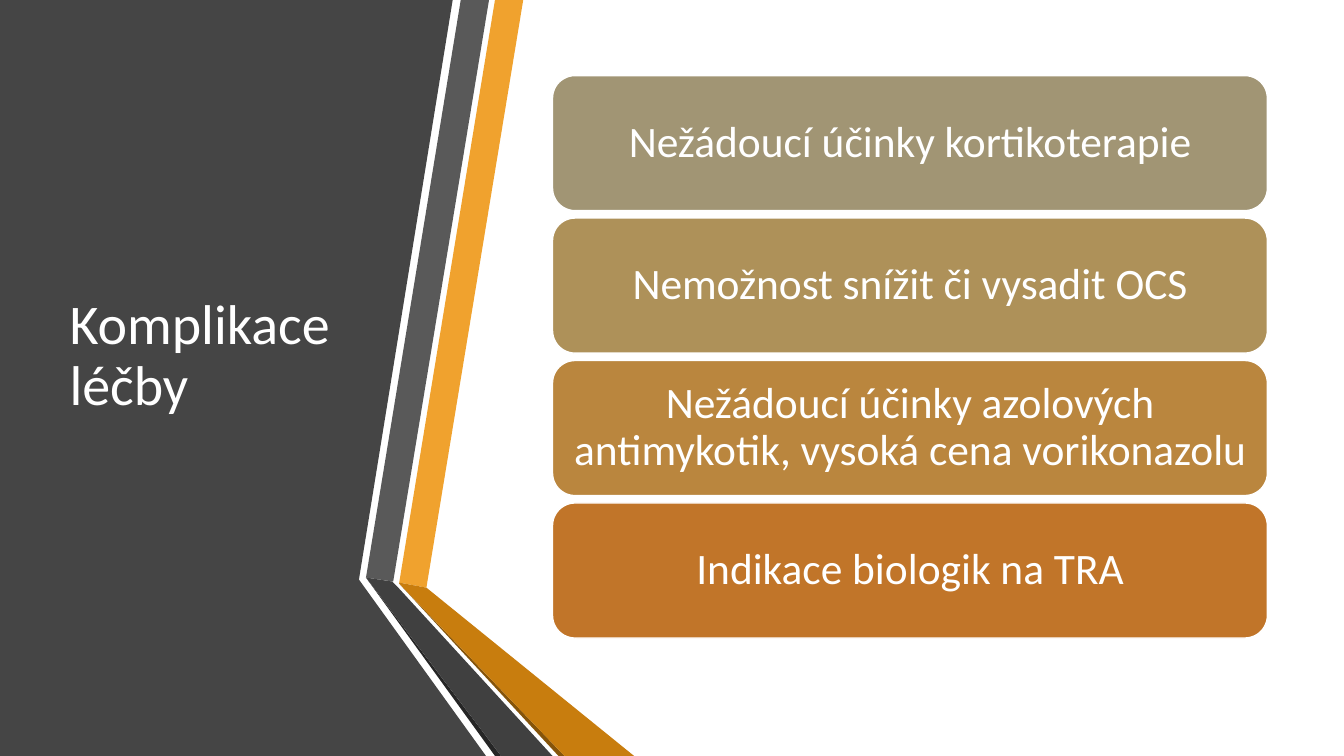
from pptx import Presentation
from pptx import util as u
from pptx.dml.color import RGBColor
from pptx.enum import shapes, text

W, H = 13.33, 7.5
TOP, BODY_H = H * 0.1, 5.58
FONT = "Calibri"
COLORS = {
    "panel": "454545", "orange": "F0A22E", "grey": "595959",
    "black": "262626", "brown": "85540A", "amber": "C87D0E",
    "charcoal": "404040", "white": "FFFFFF",
}
# Ribbon pieces from back to front: colour and corner points in inches
RIBBONS = [
    ("panel", [(0, 0), (4.49, 0), (3.56, 5.75), (4.82, H), (0, H)]),
    ("orange", [(3.96, 5.78), (4.23, 5.83), (5.19, 0), (4.91, 0)]),
    ("grey", [(4.85, 0), (4.57, 0), (3.63, 5.73), (3.9, 5.77)]),
    ("black", [(3.63, 5.73), (4.91, H), (4.97, H)]),
    ("brown", [(3.96, 5.79), (5.54, H), (5.6, H)]),
    ("amber", [(3.96, 5.79), (5.6, H), (6.29, H), (4.23, 5.83), (3.96, 5.78)]),
    ("charcoal", [(5.48, H), (3.95, 5.83), (3.89, 5.77), (3.63, 5.73), (4.97, H)]),
]
CARDS = [
    ("Nežádoucí účinky kortikoterapie", "A19574"),
    ("Nemožnost snížit či vysadit OCS", "AE9159"),
    ("Nežádoucí účinky azolových antimykotik, vysoká cena vorikonazolu", "BA863E"),
    ("Indikace biologik na TRA", "C17529"),
]
CARD_X, CARD_W, CARD_H = 5.48, 7.09, 1.34
CARD_STEP = (BODY_H - CARD_H) / (len(CARDS) - 1)


def rgb(value):
    return RGBColor.from_string(value)


def write(tf, words, size, align):
    tf.word_wrap = True
    tf.auto_size = text.MSO_AUTO_SIZE.NONE
    tf.vertical_anchor = text.MSO_ANCHOR.MIDDLE
    tf.text = words
    p = tf.paragraphs[0]
    p.alignment = align
    p.line_spacing = 0.9
    font = p.runs[0].font
    font.name, font.size = FONT, u.Pt(size)
    font.color.rgb = rgb(COLORS["white"])


def add_ribbon(s, color, points):
    corners = [(u.Inches(x), u.Inches(y)) for x, y in points]
    builder = s.shapes.build_freeform(*corners[0])
    builder.add_line_segments(corners[1:], close=True)
    sp = builder.convert_to_shape()
    sp.shadow.inherit = False
    sp.fill.solid()
    sp.fill.fore_color.rgb = rgb(COLORS[color])
    sp.line.fill.background()


def add_card(s, row, words, color):
    sp = s.shapes.add_shape(
        shapes.MSO_SHAPE.ROUNDED_RECTANGLE, u.Inches(CARD_X),
        u.Inches(TOP + row * CARD_STEP), u.Inches(CARD_W), u.Inches(CARD_H))
    sp.shadow.inherit = False
    sp.fill.solid()
    sp.fill.fore_color.rgb = rgb(color)
    sp.line.color.rgb = rgb(COLORS["white"])
    sp.line.width = u.Pt(1)
    tf = sp.text_frame
    tf.margin_left = tf.margin_right = u.Inches(0.13)
    tf.margin_top = tf.margin_bottom = u.Inches(0.06)
    write(tf, words, 31, text.PP_ALIGN.CENTER)


def place_title(s, words):
    sp = s.shapes.title
    sp.left, sp.top = u.Inches(0.59), u.Inches(TOP)
    sp.width, sp.height = u.Inches(3.04), u.Inches(BODY_H)
    write(sp.text_frame, words, 40, text.PP_ALIGN.LEFT)
    # Bring the title in front of the dark panel
    sp.element.getparent().append(sp.element)


def main():
    prs = Presentation()
    prs.slide_width, prs.slide_height = u.Inches(W), u.Inches(H)
    s = prs.slides.add_slide(prs.slide_layouts[5])
    # Dark panel and folded ribbons
    for color, points in RIBBONS:
        add_ribbon(s, color, points)
    # Title and stacked cards
    place_title(s, "Komplikace léčby")
    for row, (words, color) in enumerate(CARDS):
        add_card(s, row, words, color)
    prs.save("out.pptx")


if __name__ == "__main__":
    main()
